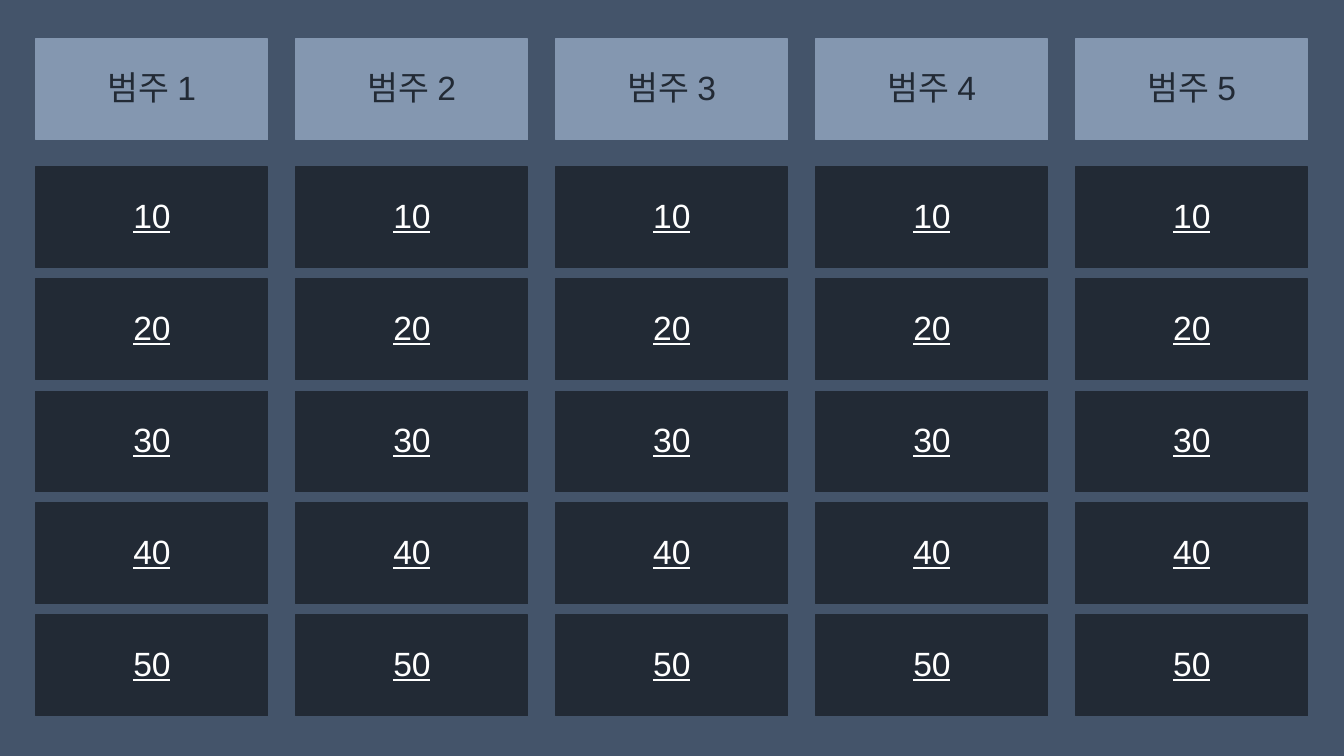
from pptx import Presentation
from pptx import util as u
from pptx.dml.color import RGBColor
from pptx.enum import shapes, text

SLATE = "44546A"
STEEL = "8497B0"
NIGHT = "222A35"
WHITE = "FFFFFF"


def px(length):
    return u.Emu(round(length * 914400 / 100.8))


def color(value):
    return RGBColor.from_string(value)


class QuizBoard:
    font = "Arial"
    size = u.Pt(24)
    line_width = u.Pt(0.75)
    line_spacing = 0.9

    def __init__(self, deck, background):
        self.page = deck.slides.add_slide(deck.slide_layouts[6])
        fill = self.page.background.fill
        fill.solid()
        fill.fore_color.rgb = color(background)

    def tile(self, left, top, width, height, words, fill, ink, underline=False):
        box = self.page.shapes.add_shape(
            shapes.MSO_SHAPE.RECTANGLE, px(left), px(top), px(width), px(height)
        )
        box.shadow.inherit = False
        box.fill.solid()
        box.fill.fore_color.rgb = color(fill)
        box.line.color.rgb = color(fill)
        box.line.width = self.line_width
        frame = box.text_frame
        frame.word_wrap = True
        frame.vertical_anchor = text.MSO_ANCHOR.MIDDLE
        para = frame.paragraphs[0]
        para.alignment = text.PP_ALIGN.CENTER
        para.line_spacing = self.line_spacing
        span = para.add_run()
        span.text = words
        span.font.name = self.font
        span.font.size = self.size
        span.font.color.rgb = color(ink)
        if underline:
            span.font.underline = True


def main():
    deck = Presentation()
    deck.slide_width = px(1344)
    deck.slide_height = px(756)
    board = QuizBoard(deck, SLATE)

    width, height = 232, 101
    for column in range(5):
        left = 36 + 260 * column
        board.tile(left, 39, width, height, f"범주 {column + 1}", STEEL, NIGHT)
        for row in range(5):
            points = str(10 * (row + 1))
            board.tile(left, 167 + 112 * row, width, height, points, NIGHT, WHITE, True)

    deck.save("out.pptx")


if __name__ == "__main__":
    main()
